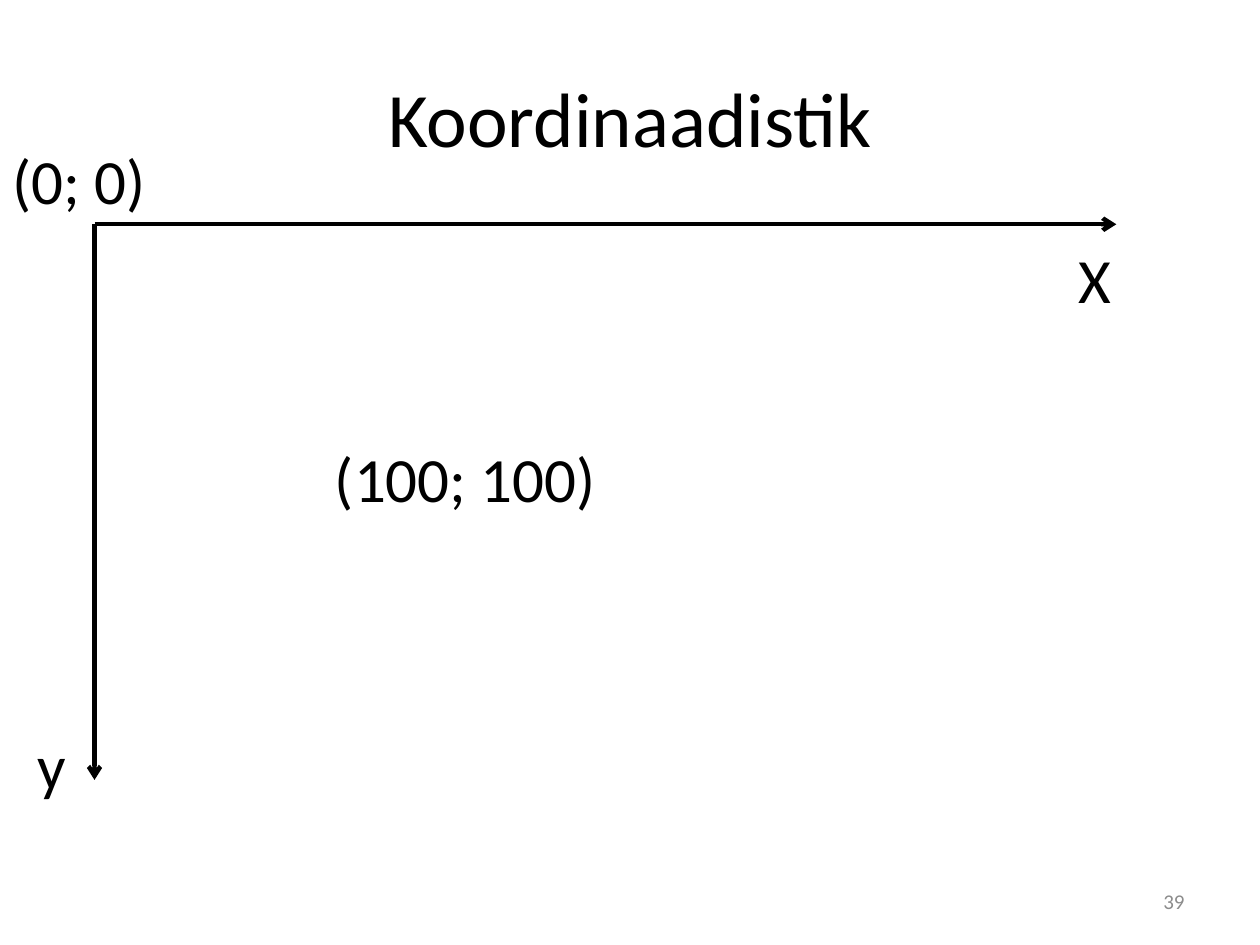
from dataclasses import dataclass

from lxml.etree import SubElement
from pptx import Presentation
from pptx.dml.color import RGBColor
from pptx.enum.shapes import MSO_CONNECTOR
from pptx.enum.text import MSO_ANCHOR as Anchor, MSO_AUTO_SIZE as AutoSize, PP_ALIGN as Align
from pptx.oxml.ns import qn
from pptx.util import Inches, Pt


@dataclass(frozen=True)
class Theme:
    font: str = "Calibri"
    ink: str = "000000"
    muted: str = "8C8C8C"
    title_size: int = 44
    label_size: int = 36
    number_size: int = 12
    axis_width: float = 2.5


THEME = Theme()
TITLE = ("Koordinaadistik", (0.5, 0.3, 9, 1.25))
PAGE_NUMBER = ("39", (7.17, 6.95, 2.33, 0.4))
ORIGIN = (0.75, 1.78)
AXIS_ENDS = [(8.86, ORIGIN[1]), (ORIGIN[0], 6.19)]
LABEL_HEIGHT = 0.71
LABELS = [
    ("(0; 0)", 0, 1.07, 1.27),
    ("y", 0.2, 5.72, 0.43),
    ("X", 8.46, 1.86, 0.46),
    ("(100; 100)", 2.56, 3.44, 2.29),
]


def write(box, text, size, color, align, anchor, wrap=True):
    frame = box.text_frame
    frame.text = text
    frame.word_wrap = wrap
    frame.auto_size = AutoSize.NONE if wrap else AutoSize.SHAPE_TO_FIT_TEXT
    frame.vertical_anchor = anchor
    paragraph = frame.paragraphs[0]
    paragraph.alignment = align
    font = paragraph.runs[0].font
    font.name = THEME.font
    font.size = Pt(size)
    font.color.rgb = RGBColor.from_string(color)


def add_axis(slide, start, end):
    axis = slide.shapes.add_connector(MSO_CONNECTOR.STRAIGHT, *map(Inches, start + end))
    axis.line.color.rgb = RGBColor.from_string(THEME.ink)
    axis.line.width = Pt(THEME.axis_width)
    SubElement(axis.line._get_or_add_ln(), qn("a:tailEnd"), type="arrow")
    SubElement(axis._element.spPr, qn("a:effectLst"))


def main():
    deck = Presentation()
    deck.slide_width, deck.slide_height = Inches(10), Inches(7.5)
    slide = deck.slides.add_slide(deck.slide_layouts[5])

    title_text, title_area = TITLE
    title = slide.shapes.title
    title.left, title.top, title.width, title.height = map(Inches, title_area)
    write(title, title_text, THEME.title_size, THEME.ink, Align.CENTER, Anchor.MIDDLE)

    number_text, number_area = PAGE_NUMBER
    page_number = slide.shapes.add_textbox(*map(Inches, number_area))
    write(page_number, number_text, THEME.number_size, THEME.muted, Align.RIGHT, Anchor.MIDDLE)

    for end in AXIS_ENDS:
        add_axis(slide, ORIGIN, end)

    for text, left, top, width in LABELS:
        label = slide.shapes.add_textbox(*map(Inches, (left, top, width, LABEL_HEIGHT)))
        write(label, text, THEME.label_size, THEME.ink, Align.LEFT, Anchor.TOP, wrap=False)

    deck.save("out.pptx")


if __name__ == "__main__":
    main()
